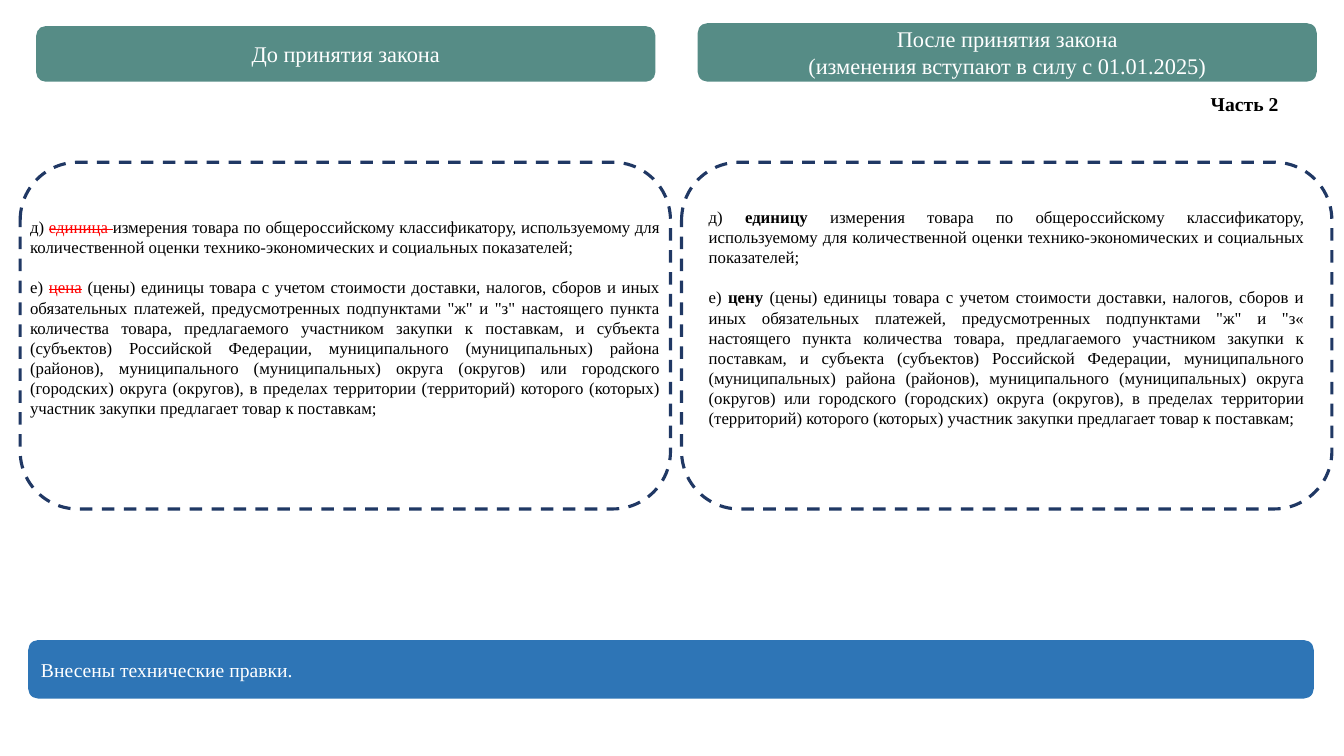
import pptx
import pptx.dml.color
import pptx.enum.dml
import pptx.enum.shapes
import pptx.enum.text
import pptx.util

COLORS = {"header": "568C86", "frame": "203864", "note": "2E75B6",
          "white": "FFFFFF", "black": "000000", "removed": "FF0000"}
FONT = "Times New Roman"
ALIGN = pptx.enum.text.PP_ALIGN
W, H = 13.33, 7.5

UNIT = ("измерения товара по общероссийскому классификатору, используемому для "
        "количественной оценки технико-экономических и социальных показателей;")
PRICE = (" (цены) единицы товара с учетом стоимости доставки, налогов, сборов и иных "
         "обязательных платежей, предусмотренных подпунктами \"ж\" и \"з{quote} настоящего "
         "пункта количества товара, предлагаемого участником закупки к поставкам, и субъекта "
         "(субъектов) Российской Федерации, муниципального (муниципальных) района (районов), "
         "муниципального (муниципальных) округа (округов) или городского (городских) округа "
         "(округов), в пределах территории (территорий) которого (которых) участник закупки "
         "предлагает товар к поставкам;")
REMOVED = {"color": "removed", "strike": True}
ADDED = {"bold": True}
BEFORE = [[("д) ", {}), ("единица ", REMOVED), (UNIT, {})],
          [("е) ", {}), ("цена", REMOVED), (PRICE.format(quote='"'), {})]]
AFTER = [[("д) ", {}), ("единицу", ADDED), (" " + UNIT, {})],
         [("е) ", {}), ("цену", ADDED), (PRICE.format(quote="«"), {})]]


def rgb(name):
    """Return the named colour."""
    return pptx.dml.color.RGBColor.from_string(COLORS[name])


def inches(box):
    """Convert a box of inches to lengths."""
    return [pptx.util.Inches(v) for v in box]


def add_run(p, text, size=12, color="black", bold=False, strike=False):
    """Append a formatted run to a paragraph."""
    r = p.add_run()
    r.text = text
    r.font.name, r.font.size, r.font.bold = FONT, pptx.util.Pt(size), bold
    r.font.color.rgb = rgb(color)
    if strike:
        r._r.get_or_add_rPr().set("strike", "sngStrike")


def write(tf, paragraphs, align=ALIGN.LEFT, gap=0, **fmt):
    """Fill a text frame with paragraphs of (text, format) runs."""
    for i, runs in enumerate(paragraphs):
        p = tf.add_paragraph() if i else tf.paragraphs[0]
        p.alignment = align
        p.space_before = pptx.util.Pt(gap if i else 0)
        for text, own in runs:
            add_run(p, text, **{**fmt, **own})


def add_panel(s, box, fill=None, line=None):
    """Add a rounded panel, filled or with a dashed outline."""
    sp = s.shapes.add_shape(pptx.enum.shapes.MSO_SHAPE.ROUNDED_RECTANGLE, *inches(box))
    sp.shadow.inherit = False
    if fill:
        sp.fill.solid()
        sp.fill.fore_color.rgb = rgb(fill)
    else:
        sp.fill.background()
    if line:
        sp.line.color.rgb = rgb(line)
        sp.line.width = pptx.util.Pt(2.25)
        sp.line.dash_style = pptx.enum.dml.MSO_LINE.DASH
    else:
        sp.line.fill.background()
    return sp


def add_bar(s, box, fill, lines, align, size):
    """Add a filled bar with white text centred vertically."""
    tf = add_panel(s, box, fill=fill).text_frame
    tf.word_wrap = True
    tf.vertical_anchor = pptx.enum.text.MSO_ANCHOR.MIDDLE
    write(tf, [[(line, {})] for line in lines], align, size=size, color="white")


def add_text(s, box, paragraphs, wrap=True, **fmt):
    """Add a text box."""
    tf = s.shapes.add_textbox(*inches(box)).text_frame
    tf.word_wrap = wrap
    write(tf, paragraphs, **fmt)


def add_column(s, box, title, title_top, clauses, inset, text_top):
    """Add one side of the comparison: header, dashed frame and clauses."""
    x, y, w, h = box
    bottom = 0.81
    add_bar(s, (x + 0.16, title_top, w - 0.31, bottom - title_top), "header",
            title, ALIGN.CENTER, 16)
    add_panel(s, box, line="frame")
    add_text(s, (x + inset, y + text_top, w - 2 * inset, 2.3), clauses,
             align=ALIGN.JUSTIFY, gap=14.4)


def main():
    """Build the comparison slide."""
    prs = pptx.Presentation()
    prs.slide_width, prs.slide_height = inches((W, H))
    s = prs.slides.add_slide(prs.slide_layouts[6])
    frame_w, step = 6.45, 6.56
    columns = [(["До принятия закона"], 0.26, BEFORE, 0, 0.49),
               (["После принятия закона", "(изменения вступают в силу с 01.01.2025)"],
                0.23, AFTER, 0.17, 0.39)]
    for i, parts in enumerate(columns):
        add_column(s, (0.2 + i * step, 1.61, frame_w, 3.44), *parts)
    add_text(s, (11.91, 0.86, 0.88, 0.34), [[("Часть 2", {})]], wrap=False,
             size=14, bold=True)
    add_bar(s, (0.28, 6.35, 12.75, 0.58), "note", ["Внесены технические правки."],
            ALIGN.JUSTIFY, 14)
    prs.save("out.pptx")


if __name__ == "__main__":
    main()
